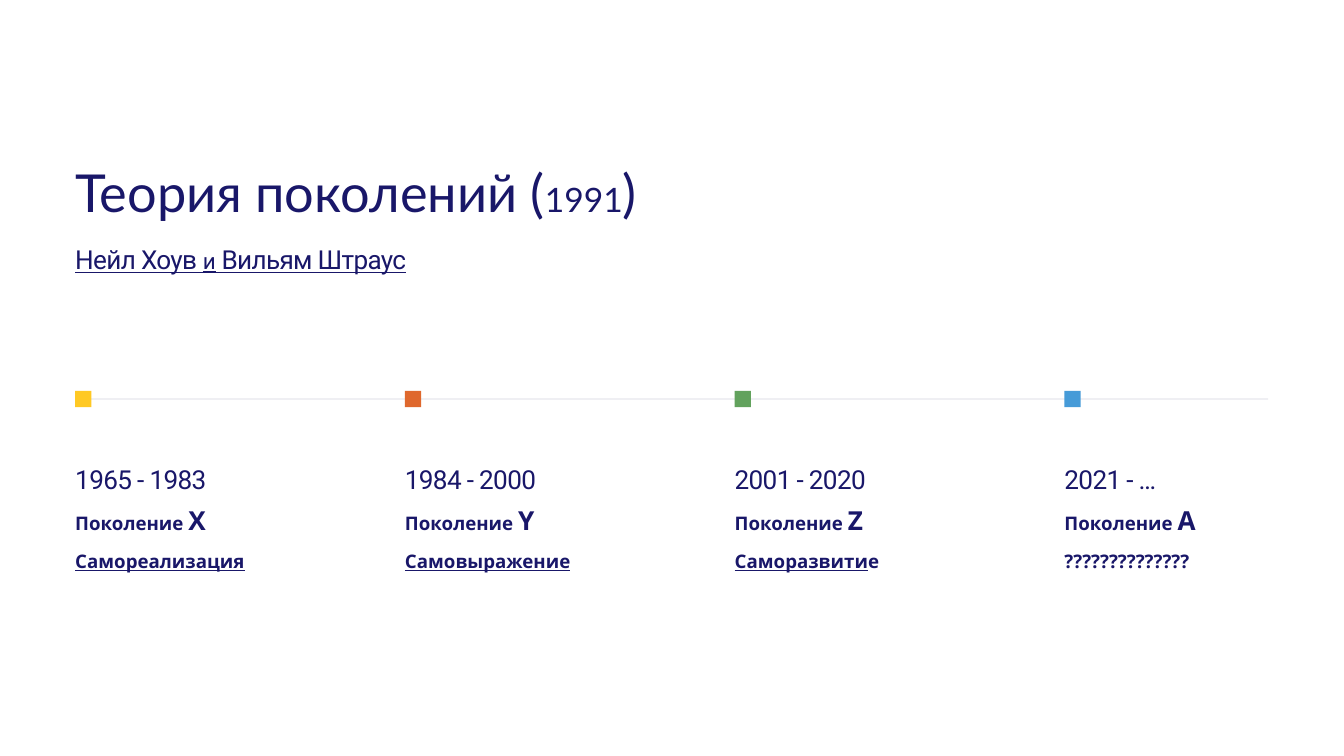
from lxml.etree import SubElement as Sub
from pptx import Presentation
from pptx.dml.color import RGBColor as RGB
from pptx.enum.shapes import MSO_SHAPE as Shape
from pptx.enum.text import MSO_AUTO_SIZE as Fit
from pptx.oxml.ns import qn
from pptx.util import Pt


class Theme:
    ink = "191769"
    rule = "29285D"
    marks = ("FFC924", "DF682D", "62A25D", "469BD8")
    title = {"name": "Lato", "size": Pt(56)}
    year = {"size": Pt(36)}
    lead = {"name": "Roboto", "size": Pt(28)}
    under = {"underline": True}
    small = {"size": Pt(24)}
    body = {"name": "Open Sans", "size": Pt(20), "bold": True}
    big = {"size": Pt(28)}
    tight = -0.7


class Deck:
    def __init__(self, theme, wide, high):
        self.theme = theme
        self.prs = Presentation()
        self.prs.slide_width, self.prs.slide_height = Pt(wide), Pt(high)
        self.slide = self.prs.slides.add_slide(self.prs.slide_layouts[6])

    def rect(self, x, y, w, h, color, alpha=None):
        """Add a plain rectangle; alpha is its opacity in percent."""
        box = self.slide.shapes.add_shape(
            Shape.RECTANGLE, Pt(x), Pt(y), Pt(w), Pt(h))
        box.shadow.inherit = False
        box.line.fill.background()
        box.fill.solid()
        box.fill.fore_color.rgb = RGB.from_string(color)
        if alpha is not None:
            tint = box._element.spPr.find(".//" + qn("a:srgbClr"))
            Sub(tint, qn("a:alpha"), val=str(alpha * 1000))

    def text(self, x, y, w, h, paras, base, line, gap=0, track=0):
        """Add paragraphs, each a list of (words, format changes)."""
        box = self.slide.shapes.add_textbox(Pt(x), Pt(y), Pt(w), Pt(h))
        frame = box.text_frame
        frame.word_wrap = True
        frame.auto_size = Fit.SHAPE_TO_FIT_TEXT
        for side in ("left", "top", "right", "bottom"):
            setattr(frame, "margin_" + side, 0)
        for i, runs in enumerate(paras):
            para = frame.add_paragraph() if i else frame.paragraphs[0]
            para.line_spacing = Pt(line)
            if i:
                para.space_before = Pt(gap)
            for words, change in runs:
                run = para.add_run()
                run.text = words
                for key, value in {**base, **change}.items():
                    setattr(run.font, key, value)
                run.font.color.rgb = RGB.from_string(self.theme.ink)
                if track:
                    run._r.get_or_add_rPr().set("spc", str(round(track * 100)))


def main():
    theme = Theme()
    deck = Deck(theme, 1440, 810)
    left, step, mark, axis = 80.64, 353.3, 17.28, 427.5

    deck.rect(left, axis - 0.4, 1278, 0.8, theme.rule, alpha=20)
    deck.text(left, 183.6, 678, 55.4,
              [[("Теория поколений (", {}), ("1991", theme.year), (")", {})]],
              theme.title, 55.4)
    deck.text(left, 263.5, 449, 32.4,
              [[("Нейл Хоув ", {}), ("и", theme.small),
                (" Вильям Штраус", {})]],
              {**theme.lead, **theme.under}, 31.1, track=theme.tight)

    eras = (
        ("1965 - 1983", "X", [("Самореализация", theme.under)]),
        ("1984 - 2000", "Y", [("Самовыражение", theme.under)]),
        ("2001 - 2020", "Z", [("Саморазвити", theme.under), ("е", {})]),
        ("2021 - …", "A", [("??????????????", {})]),
    )
    for i, (years, name, goal) in enumerate(eras):
        x = left + i * step
        deck.rect(x, axis - mark / 2, mark, mark, theme.marks[i])
        deck.text(x, 494.6, 219, 36, [[(years, {})]], theme.lead, 35.8,
                  track=theme.tight)
        deck.text(x, 554.4, 219, 60,
                  [[("Поколение ", {}), (name, theme.big)], goal],
                  theme.body, 19.6, gap=19.6)

    deck.prs.save("out.pptx")


if __name__ == "__main__":
    main()
